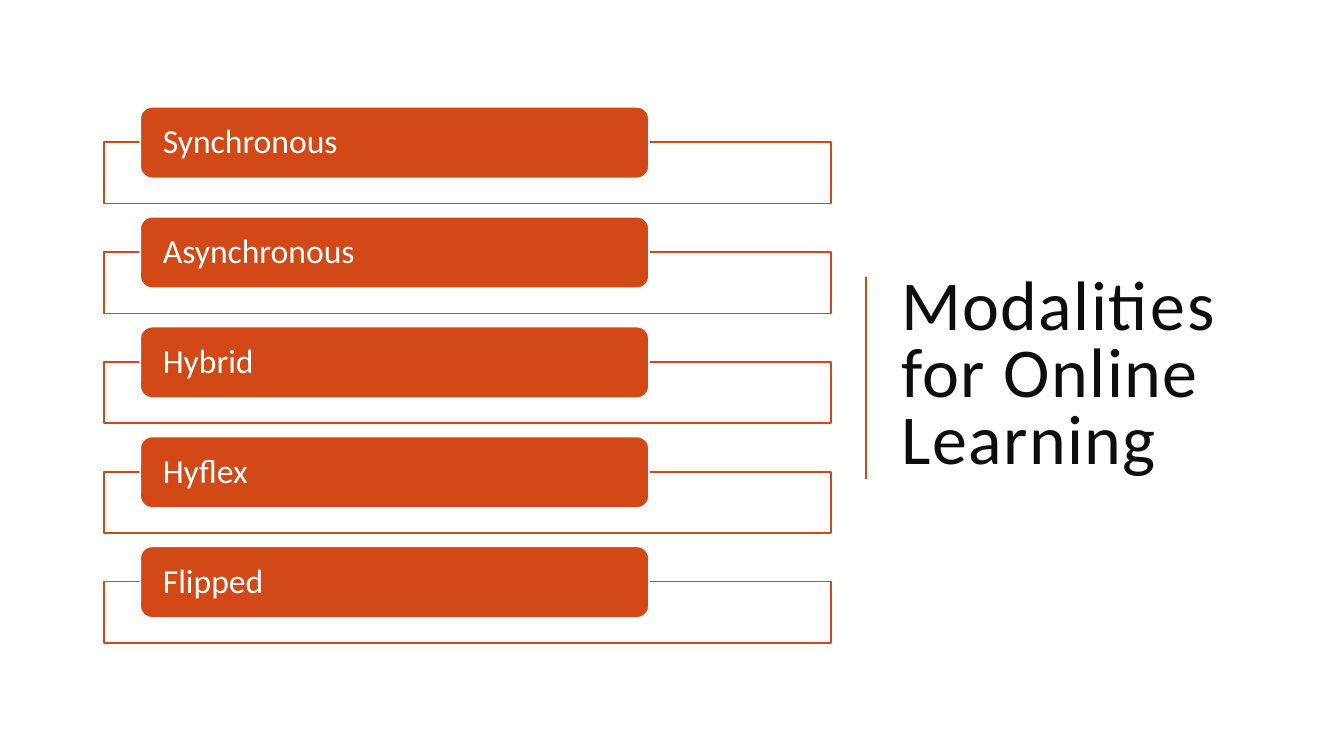
from pptx import Presentation
from pptx.dml.color import RGBColor
from pptx.enum.shapes import MSO_CONNECTOR, MSO_SHAPE
from pptx.enum.text import MSO_ANCHOR, MSO_AUTO_SIZE, PP_ALIGN
from pptx.oxml.ns import qn
from pptx.util import Inches, Pt
from lxml import etree

STRAIGHT = MSO_CONNECTOR.STRAIGHT
RECTANGLE = MSO_SHAPE.RECTANGLE
ROUNDED_RECTANGLE = MSO_SHAPE.ROUNDED_RECTANGLE
MIDDLE = MSO_ANCHOR.MIDDLE
NO_AUTOFIT = MSO_AUTO_SIZE.NONE
LEFT = PP_ALIGN.LEFT

ORANGE = RGBColor(0xD3, 0x48, 0x17)
WHITE = RGBColor(0xFF, 0xFF, 0xFF)
NEAR_BLACK = RGBColor(0x0D, 0x0D, 0x0D)
FONT = "Calibri"
MODALITIES = ["Synchronous", "Asynchronous", "Hybrid", "Hyflex", "Flipped"]


def format_text(text_frame, text, size, color, line_spacing, inset):
    text_frame.text = text
    text_frame.word_wrap = True
    text_frame.auto_size = NO_AUTOFIT
    text_frame.vertical_anchor = MIDDLE
    text_frame.margin_left = text_frame.margin_right = inset
    text_frame.margin_top = text_frame.margin_bottom = Inches(0.05)
    paragraph = text_frame.paragraphs[0]
    paragraph.alignment = LEFT
    paragraph.line_spacing = line_spacing
    paragraph.font.name = FONT
    paragraph.font.size = Pt(size)
    paragraph.font.color.rgb = color
    return paragraph


def add_box(slide, kind, left, top, width, height, fill, line):
    shape = slide.shapes.add_shape(kind, left, top, width, height)
    shape.shadow.inherit = False
    shape.fill.solid()
    shape.fill.fore_color.rgb = fill
    shape.line.color.rgb = line
    shape.line.width = Pt(1.25)
    return shape


def add_title(slide, left, top, width, height):
    title = slide.shapes.title
    title.left, title.top, title.width, title.height = left, top, width, height
    paragraph = format_text(title.text_frame, "Modalities for Online Learning",
                            50, NEAR_BLACK, 0.8, Inches(0.05))
    paragraph.runs[0]._r.get_or_add_rPr().set("spc", "100")


def add_divider(slide, left, top, height):
    divider = slide.shapes.add_connector(STRAIGHT, left, top, left, top + height)
    divider.line.color.rgb = ORANGE
    divider.line.width = Pt(1.5)
    etree.SubElement(divider._element.spPr, qn("a:effectLst"))


def add_modality(slide, name, left, top, width):
    add_box(slide, RECTANGLE, left, top + Inches(0.35), width, Inches(0.61),
            WHITE, ORANGE)
    label = add_box(slide, ROUNDED_RECTANGLE, left + Inches(0.36), top,
                    width * 0.7, Inches(0.71), ORANGE, WHITE)
    format_text(label.text_frame, name, 24, WHITE, 0.9, Inches(0.19))


def add_modality_list(slide, left, top, width, pitch):
    for index, name in enumerate(MODALITIES):
        add_modality(slide, name, left, top + index * pitch, width)


def main():
    presentation = Presentation()
    presentation.slide_width = Inches(13.33)
    presentation.slide_height = Inches(7.5)
    slide = presentation.slides.add_slide(presentation.slide_layouts[5])
    add_title(slide, Inches(8.89), Inches(0.7), Inches(3.8), Inches(6.09))
    add_divider(slide, Inches(8.59), Inches(2.75), Inches(2))
    add_modality_list(slide, Inches(1.03), Inches(1.06), Inches(7.21), Inches(1.09))
    presentation.save("out.pptx")


if __name__ == "__main__":
    main()
